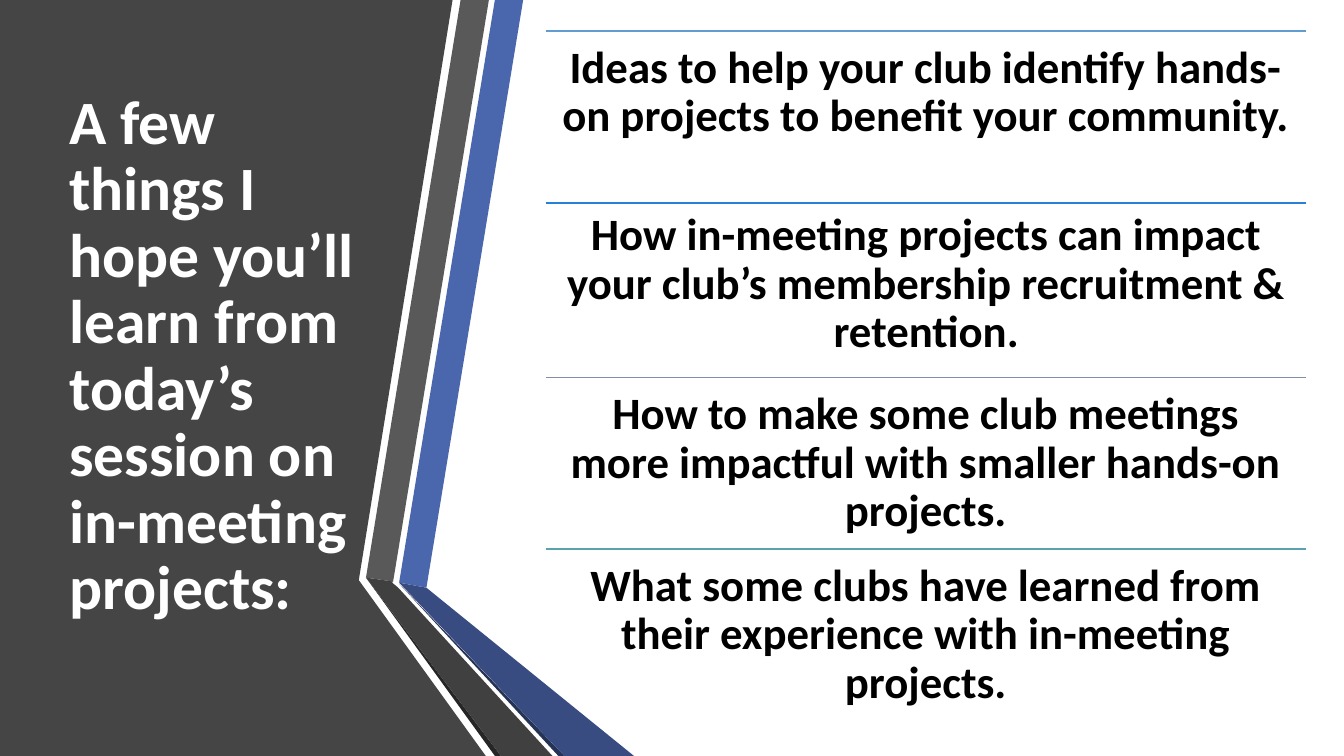
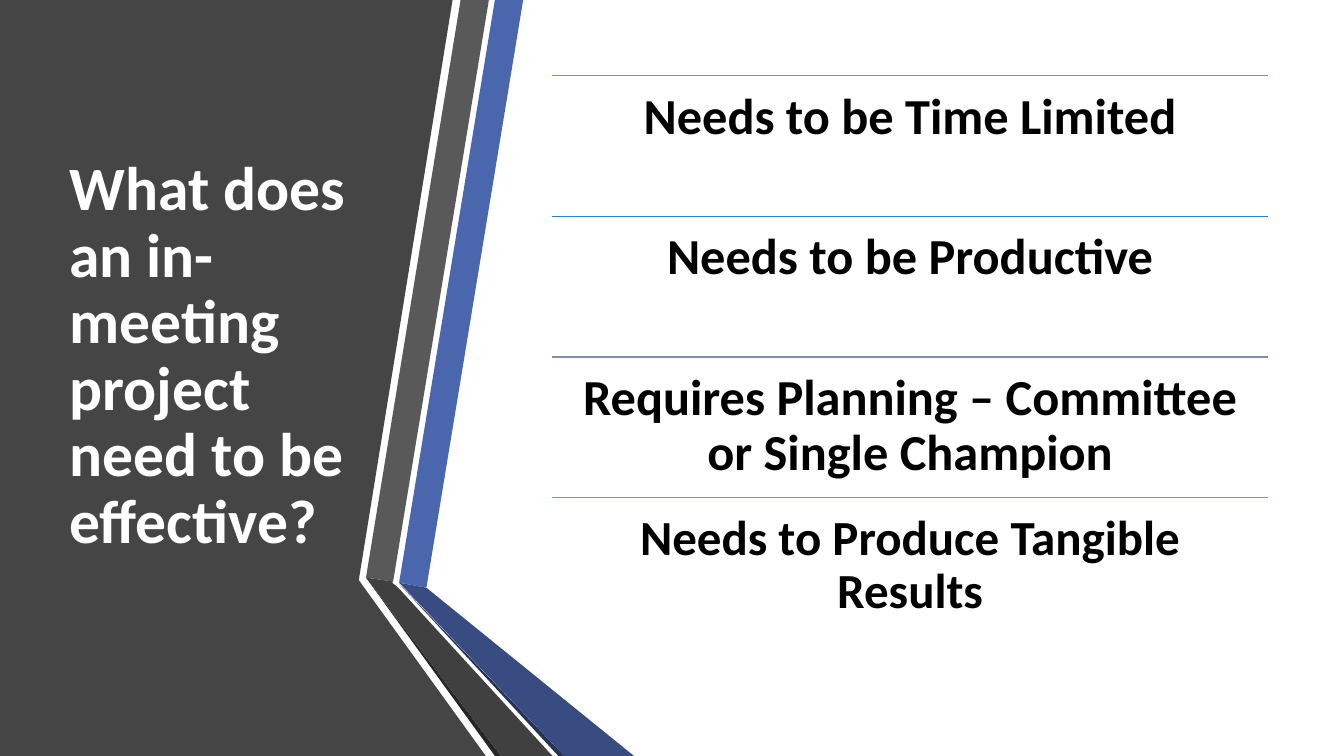
from dataclasses import dataclass

from lxml.etree import SubElement
from pptx import Presentation
from pptx.dml.color import RGBColor
from pptx.enum.shapes import MSO_CONNECTOR as Connector
from pptx.enum.text import MSO_ANCHOR as Anchor, PP_ALIGN as Align
from pptx.oxml.ns import qn
from pptx.slide import Slide
from pptx.util import Pt

FONT = "Calibri"
COLORS = {
    "panel": "454545",
    "blue": "4A66AC",
    "blue_shade": "384C81",
    "blue_edge": "253356",
    "gray": "595959",
    "gray_shade": "404040",
    "gray_edge": "262626",
    "white": "FFFFFF",
    "black": "000000",
    "rule_1": "629DD1",
    "rule_2": "297FD5",
    "rule_3": "7F8FA9",
    "rule_4": "5AA2AE",
}


@dataclass(frozen=True)
class Band:
    color: str
    points: tuple[tuple[float, float], ...]


@dataclass(frozen=True)
class Box:
    left: float
    top: float
    width: float
    height: float


@dataclass(frozen=True)
class TextStyle:
    size: float
    color: str
    align: Align
    anchor: Anchor
    inset_x: float
    inset_y: float


@dataclass(frozen=True)
class Topic:
    text: str
    rule_top: float
    text_box: Box
    size: float


@dataclass(frozen=True)
class Page:
    title: str
    inset: float
    topics: tuple[Topic, ...]


BANDS = (
    Band("panel", ((0, 0), (323.3, 0), (256.3, 414.4), (347, 540), (0, 540))),
    Band("blue", ((285.1, 416.2), (304.6, 419.8), (373.7, 0), (353.5, 0))),
    Band("gray", ((349.2, 0), (329, 0), (261.4, 412.6), (280.8, 415.4))),
    Band("gray_edge", ((261.4, 412.6), (353.5, 540), (357.8, 540))),
    Band("blue_edge", ((285.1, 416.9), (398.9, 540), (403.2, 540))),
    Band("blue_shade", ((285.1, 416.2), (403.2, 540), (452.9, 540), (304.6, 419.8))),
    Band("gray_shade", ((394.6, 540), (284.4, 419.8), (280.1, 416.2),
                        (280.8, 415.4), (261.4, 412.6), (357.8, 540))),
)
TITLE_BOX = Box(42.5, 54, 218.9, 401.8)
TITLE_STYLE = TextStyle(44, "white", Align.LEFT, Anchor.MIDDLE, 7.2, 3.6)

LEARNING = Page(
    "A few things I hope you’ll learn from today’s session on in-meeting projects:",
    9.6,
    (
        Topic("Ideas to help your club identify hands-on projects to benefit your community.",
              22.2, Box(389.8, 22.2, 543, 122.4), 32),
        Topic("How in-meeting projects can impact your club’s membership recruitment & retention.",
              144.9, Box(390.1, 141.8, 543, 124.6), 32),
        Topic("How to make some club meetings more impactful with smaller hands-on projects.",
              269.8, Box(389.8, 269.8, 543, 122.4), 32),
        Topic("What some clubs have learned from their experience with in-meeting projects.",
              392.2, Box(389.8, 392.2, 543, 137.5), 32),
    ),
)

NEEDS_TOP, NEEDS_PITCH = 54, 100.5
NEEDS = (
    ("Needs to be Time Limited", 36),
    ("Needs to be Productive", 36),
    ("Requires Planning – Committee or Single Champion", 36),
    ("Needs to Produce Tangible Results", 35),
)
EFFECTIVENESS = Page(
    "What does an in-meeting project need to be effective?",
    10.8,
    tuple(
        Topic(text, top, Box(394.6, top, 511.2, NEEDS_PITCH), size)
        for top, (text, size) in (
            (NEEDS_TOP + row * NEEDS_PITCH, need) for row, need in enumerate(NEEDS)
        )
    ),
)


def rgb(name: str) -> RGBColor:
    return RGBColor.from_string(COLORS[name])


def add_band(slide: Slide, band: Band) -> None:
    start, *others = [(Pt(x), Pt(y)) for x, y in band.points]
    builder = slide.shapes.build_freeform(*start)
    builder.add_line_segments(others, close=True)
    shape = builder.convert_to_shape()
    shape.shadow.inherit = False
    shape.fill.solid()
    shape.fill.fore_color.rgb = rgb(band.color)
    shape.line.fill.background()


def add_text(slide: Slide, text: str, box: Box, style: TextStyle) -> None:
    shape = slide.shapes.add_textbox(Pt(box.left), Pt(box.top), Pt(box.width), Pt(box.height))
    frame = shape.text_frame
    frame.word_wrap = True
    frame.vertical_anchor = style.anchor
    frame.margin_left = frame.margin_right = Pt(style.inset_x)
    frame.margin_top = frame.margin_bottom = Pt(style.inset_y)
    paragraph = frame.paragraphs[0]
    paragraph.text = text
    paragraph.alignment = style.align
    paragraph.line_spacing = 0.9
    paragraph.font.name = FONT
    paragraph.font.size = Pt(style.size)
    paragraph.font.bold = True
    paragraph.font.color.rgb = rgb(style.color)


def add_rule(slide: Slide, left: float, top: float, width: float, color: str) -> None:
    rule = slide.shapes.add_connector(
        Connector.STRAIGHT, Pt(left), Pt(top), Pt(left + width), Pt(top)
    )
    rule.line.color.rgb = rgb(color)
    rule.line.width = Pt(1)
    SubElement(rule.element.spPr, qn("a:effectLst"))


def add_page(presentation: Presentation, page: Page) -> None:
    slide = presentation.slides.add_slide(presentation.slide_layouts[6])
    for band in BANDS:
        add_band(slide, band)
    add_text(slide, page.title, TITLE_BOX, TITLE_STYLE)
    rule_left = page.topics[0].text_box.left
    for number, topic in enumerate(page.topics, start=1):
        add_rule(slide, rule_left, topic.rule_top, topic.text_box.width, f"rule_{number}")
        style = TextStyle(topic.size, "black", Align.CENTER, Anchor.TOP, page.inset, page.inset)
        add_text(slide, topic.text, topic.text_box, style)


def main() -> None:
    presentation = Presentation()
    presentation.slide_width = Pt(960)
    presentation.slide_height = Pt(540)
    for page in (LEARNING, EFFECTIVENESS):
        add_page(presentation, page)
    presentation.save("out.pptx")


if __name__ == "__main__":
    main()
